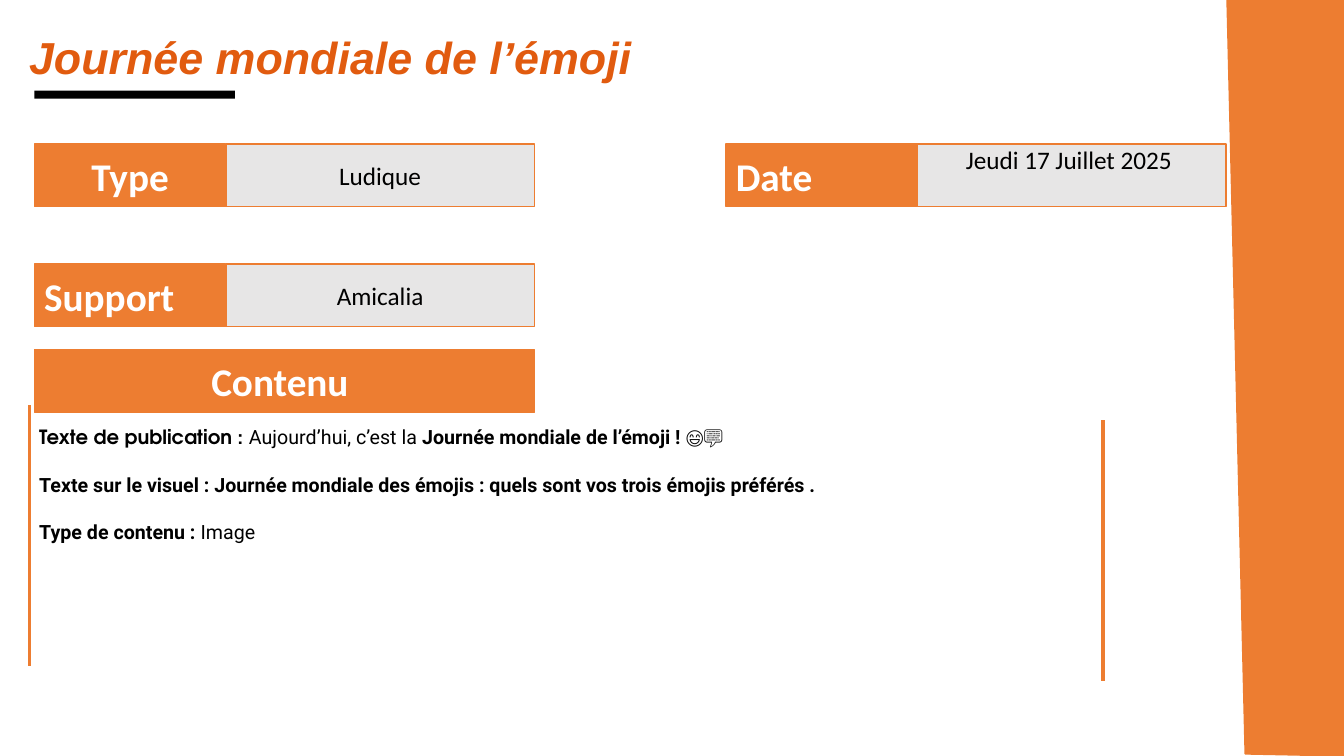
import pptx
import pptx.util
import pptx.dml.color
import pptx.enum.shapes
import pptx.enum.text
import pptx.oxml.ns
import lxml.etree

Inches = pptx.util.Inches
Pt = pptx.util.Pt
RGB = pptx.dml.color.RGBColor
ALIGN = pptx.enum.text.PP_ALIGN
ANCHOR = pptx.enum.text.MSO_ANCHOR

ORANGE = RGB(0xED, 0x7D, 0x31)
RUST = RGB(0xE1, 0x5B, 0x0F)
GREY = RGB(0xE7, 0xE6, 0xE6)
BLACK = RGB(0, 0, 0)
WHITE = RGB(0xFF, 0xFF, 0xFF)

WIDE, HIGH = 13.33, 7.5
LEFT, RIGHT = 0.34, 7.2
TOP, STEP = 1.43, 1.19
PAIR, ROW = 4.96, 0.62
LABEL = 1.9

BODY = [
    [("Texte de publication : ", True, "TeX Gyre Adventor"),
     ("Aujourd’hui, c’est la ", False, "Roboto"),
     ("Journée mondiale de l’émoji !", True, "Roboto"),
     (" 😄💬", False, "Roboto")],
    [("Texte sur le visuel : Journée mondiale des émojis : "
      "quels sont vos trois émojis préférés .", True, "Roboto")],
    [("Type de contenu : ", True, "Roboto"),
     ("Image", False, "Roboto")],
]


def paint(shape, fill, line=None):
    """Give a shape its flat fill and its outline."""
    shape.shadow.inherit = False
    shape.fill.solid()
    shape.fill.fore_color.rgb = fill
    if line is None:
        shape.line.fill.background()
    else:
        shape.line.color.rgb = line
        shape.line.width = Pt(1)


def style(font, name, size, color, bold=False):
    """Set the face, size, colour and weight of a font."""
    font.name = name
    font.size = Pt(size)
    font.color.rgb = color
    font.bold = bold


def block(slide, box, fill, line=None):
    """Draw a rectangle in the box and return it."""
    kind = pptx.enum.shapes.MSO_SHAPE.RECTANGLE
    shape = slide.shapes.add_shape(kind, *map(Inches, box))
    paint(shape, fill, line)
    return shape


def cell(slide, box, text, head, align=ALIGN.CENTER):
    """Draw a heading cell or a value cell with its text."""
    shape = block(slide, box, ORANGE if head else GREY, ORANGE)
    frame = shape.text_frame
    frame.word_wrap = True
    frame.vertical_anchor = ANCHOR.MIDDLE
    para = frame.paragraphs[0]
    para.text = text
    para.alignment = align
    style(para.font, "Calibri", 28 if head else 18,
          WHITE if head else BLACK, head)
    return frame


def pair(slide, box, name, value, align=ALIGN.LEFT):
    """Draw a label beside its value, and return the value's frame."""
    x, y, w, h = box
    cell(slide, (x, y, LABEL, h), name, True, align)
    return cell(slide, (x + LABEL, y, w - LABEL, h), value, False)


def rule(slide, x, y, h):
    """Draw an upright orange line."""
    kind = pptx.enum.shapes.MSO_CONNECTOR.STRAIGHT
    line = slide.shapes.add_connector(
        kind, Inches(x), Inches(y), Inches(x), Inches(y + h))
    line.line.color.rgb = ORANGE
    line.line.width = Pt(2.25)
    props = line._element.spPr
    lxml.etree.SubElement(props, pptx.oxml.ns.qn("a:effectLst"))


def band(slide, box):
    """Draw the slanted band down the side of the slide."""
    x, y, w, h = box
    pen = slide.shapes.build_freeform(Inches(x), Inches(y), scale=1)
    pen.add_line_segments([
        (Inches(x + w), Inches(y)),
        (Inches(x + w), Inches(y + h)),
        (Inches(x + 0.18), Inches(y + h - 0.02)),
    ], close=True)
    paint(pen.convert_to_shape(), ORANGE, ORANGE)


def title(slide, box):
    """Write the title with the black bar under it."""
    x, y, w, h = box
    frame = slide.shapes.add_textbox(*map(Inches, box)).text_frame
    frame.word_wrap = True
    para = frame.paragraphs[0]
    para.text = "Journée mondiale de l’émoji"
    para.alignment = ALIGN.JUSTIFY
    style(para.font, "Arial", 32, RUST, True)
    para.font.italic = True
    block(slide, (x + 0.15, y + 0.65, 1.99, 0.08), BLACK)


def facts(slide, box):
    """Place the three label and value pairs on their rows."""
    x, y, w, h = box
    pair(slide, (x, y, PAIR, ROW), "Type", "Ludique", ALIGN.CENTER)
    date = pair(slide, (x + w - PAIR, y, PAIR, ROW),
                "Date", "Jeudi 17 Juillet 2025 ")
    date.vertical_anchor = ANCHOR.TOP
    date.margin_top = 0
    pair(slide, (x, y + h - ROW, PAIR, ROW), "Support", "Amicalia")


def content(slide, box):
    """Write the content heading, its side lines and its text."""
    x, y, w, h = box
    rule(slide, x, y - 0.15, h)
    rule(slide, x + w, y, h)
    cell(slide, (LEFT, y - 0.7, PAIR, ROW), "Contenu ", True)
    area = map(Inches, (x, y, w - 0.23, 1.51))
    frame = slide.shapes.add_textbox(*area).text_frame
    frame.word_wrap = True
    for i, parts in enumerate(BODY):
        para = frame.paragraphs[0] if i == 0 else frame.add_paragraph()
        para.space_after = Pt(17)
        for text, bold, name in parts:
            run = para.add_run()
            run.text = text
            style(run.font, name, 14, BLACK, bold)


def main():
    """Build the slide and save it."""
    deck = pptx.Presentation()
    deck.slide_width = Inches(WIDE)
    deck.slide_height = Inches(HIGH)
    slide = deck.slides.add_slide(deck.slide_layouts[6])
    band(slide, (12.17, 0, WIDE - 12.17, HIGH))
    title(slide, (0.19, 0.25, 11.03, 0.52))
    facts(slide, (LEFT, TOP, RIGHT + PAIR - LEFT, STEP + ROW))
    content(slide, (0.29, 4.17, 10.65, 2.59))
    deck.save("out.pptx")


if __name__ == "__main__":
    main()
